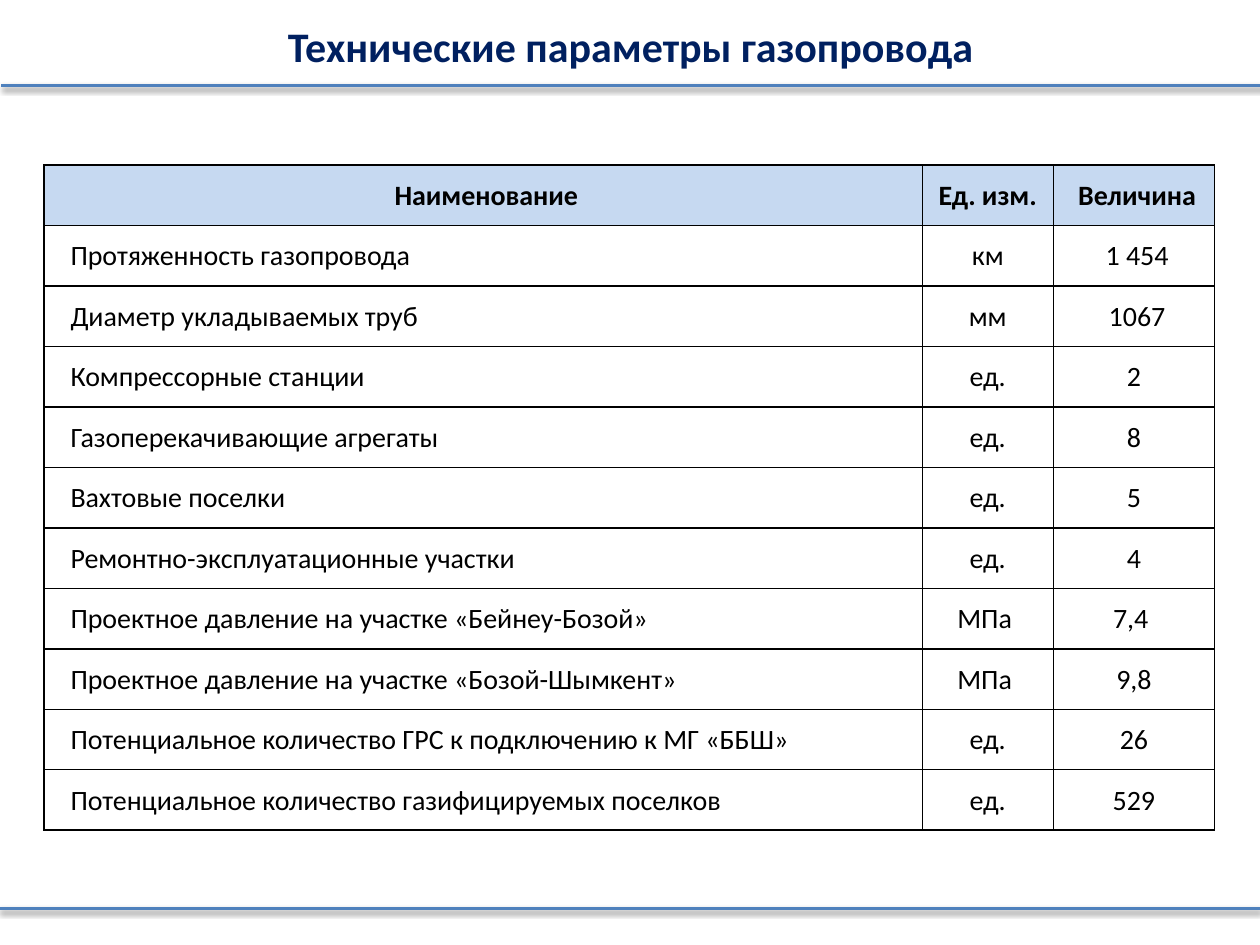
from dataclasses import dataclass

from lxml.etree import SubElement
from pptx import Presentation
from pptx.dml.color import RGBColor
from pptx.enum.shapes import MSO_CONNECTOR
from pptx.enum.text import MSO_ANCHOR, PP_ALIGN
from pptx.oxml.ns import qn
from pptx.slide import Slide
from pptx.table import _Cell
from pptx.text.text import TextFrame
from pptx.util import Pt

COLORS = {
    "title": "002060",
    "rule": "4F81BD",
    "header": "C6D9F1",
    "ink": "000000",
}
COLUMN_WIDTHS = (501.84, 74.88, 92.16)
ROW_HEIGHT = 34.56


@dataclass
class Rule:
    left: float
    top: float
    width: float = 720


@dataclass
class Parameter:
    name: str
    unit: str
    value: str


RULES = (Rule(0.72, 48.96), Rule(0, 519.12))
HEADING = Parameter(" Наименование", "Ед. изм.", " Величина")
PARAMETERS = (
    Parameter("Протяженность газопровода", "км", " 1 454"),
    Parameter("Диаметр укладываемых труб", "мм", " 1067"),
    Parameter("Компрессорные станции", "ед.", "2"),
    Parameter("Газоперекачивающие агрегаты", "ед.", "8"),
    Parameter("Вахтовые поселки", "ед.", "5"),
    Parameter("Ремонтно-эксплуатационные участки", "ед.", "4"),
    Parameter("Проектное давление на участке «Бейнеу-Бозой»", "МПа ", "7,4 "),
    Parameter("Проектное давление на участке «Бозой-Шымкент»", "МПа ", "9,8"),
    Parameter("Потенциальное количество ГРС к подключению к МГ «ББШ»", "ед.", "26"),
    Parameter("Потенциальное количество газифицируемых поселков", "ед.", "529"),
)


def apply_format(target: object, values: dict) -> None:
    for name, value in values.items():
        setattr(target, name, value)


def write_text(frame: TextFrame, text: str, size: float, color: str,
               bold: bool, align: PP_ALIGN) -> None:
    paragraph = frame.paragraphs[0]
    paragraph.alignment = align
    span = paragraph.add_run()
    span.text = text
    apply_format(span.font, {"name": "Calibri", "size": Pt(size), "bold": bold})
    span.font.color.rgb = RGBColor.from_string(COLORS[color])


def add_title(page: Slide, text: str) -> None:
    box = page.shapes.title
    apply_format(box, {"left": Pt(0), "top": Pt(9.36),
                       "width": Pt(720.72), "height": Pt(33.84)})
    apply_format(box.text_frame, {"word_wrap": True,
                                  "vertical_anchor": MSO_ANCHOR.MIDDLE})
    write_text(box.text_frame, text, 24, "title", True, PP_ALIGN.CENTER)


def add_rule(page: Slide, rule: Rule) -> None:
    line = page.shapes.add_connector(
        MSO_CONNECTOR.STRAIGHT, Pt(rule.left), Pt(rule.top),
        Pt(rule.left + rule.width), Pt(rule.top))
    line.line.width = Pt(2)
    line.line.color.rgb = RGBColor.from_string(COLORS["rule"])
    effects = SubElement(line._element.spPr, qn("a:effectLst"))
    shadow = SubElement(effects, qn("a:outerShdw"), blurRad=str(Pt(3.1)),
                        dist=str(Pt(1.6)), dir="5400000", rotWithShape="0")
    color = SubElement(shadow, qn("a:srgbClr"), val=COLORS["ink"])
    SubElement(color, qn("a:alpha"), val="38000")


def add_borders(cell: _Cell) -> None:
    properties = cell._tc.get_or_add_tcPr()
    for side in ("lnL", "lnR", "lnT", "lnB"):
        border = SubElement(properties, qn(f"a:{side}"), w=str(Pt(1)))
        fill = SubElement(border, qn("a:solidFill"))
        SubElement(fill, qn("a:srgbClr"), val=COLORS["ink"])


def format_cell(cell: _Cell, text: str, heading: bool, indented: bool) -> None:
    add_borders(cell)
    if heading:
        cell.fill.solid()
        cell.fill.fore_color.rgb = RGBColor.from_string(COLORS["header"])
    else:
        cell.fill.background()
    apply_format(cell, {
        "vertical_anchor": MSO_ANCHOR.MIDDLE,
        "margin_left": Pt(15.12 if indented else 0.72),
        "margin_right": Pt(0.72),
        "margin_top": Pt(0.72),
        "margin_bottom": Pt(0),
    })
    align = PP_ALIGN.LEFT if indented else PP_ALIGN.CENTER
    write_text(cell.text_frame, text, 16, "ink", heading, align)


def add_parameter_table(page: Slide) -> None:
    rows = (HEADING, *PARAMETERS)
    table = page.shapes.add_table(
        len(rows), len(COLUMN_WIDTHS), Pt(25.2), Pt(94.32),
        Pt(sum(COLUMN_WIDTHS)), Pt(ROW_HEIGHT * len(rows))).table
    apply_format(table, {"first_row": False, "horz_banding": False})
    for column, width in zip(table.columns, COLUMN_WIDTHS):
        column.width = Pt(width)
    for row_index, parameter in enumerate(rows):
        table.rows[row_index].height = Pt(ROW_HEIGHT)
        heading = row_index == 0
        texts = (parameter.name, parameter.unit, parameter.value)
        for column_index, text in enumerate(texts):
            format_cell(table.cell(row_index, column_index), text, heading,
                        indented=column_index == 0 and not heading)


def main() -> None:
    deck = Presentation()
    apply_format(deck, {"slide_width": Pt(720), "slide_height": Pt(540)})
    page = deck.slides.add_slide(deck.slide_layouts[5])
    add_title(page, "Технические параметры газопровода")
    add_parameter_table(page)
    for rule in RULES:
        add_rule(page, rule)
    deck.save("out.pptx")


if __name__ == "__main__":
    main()
